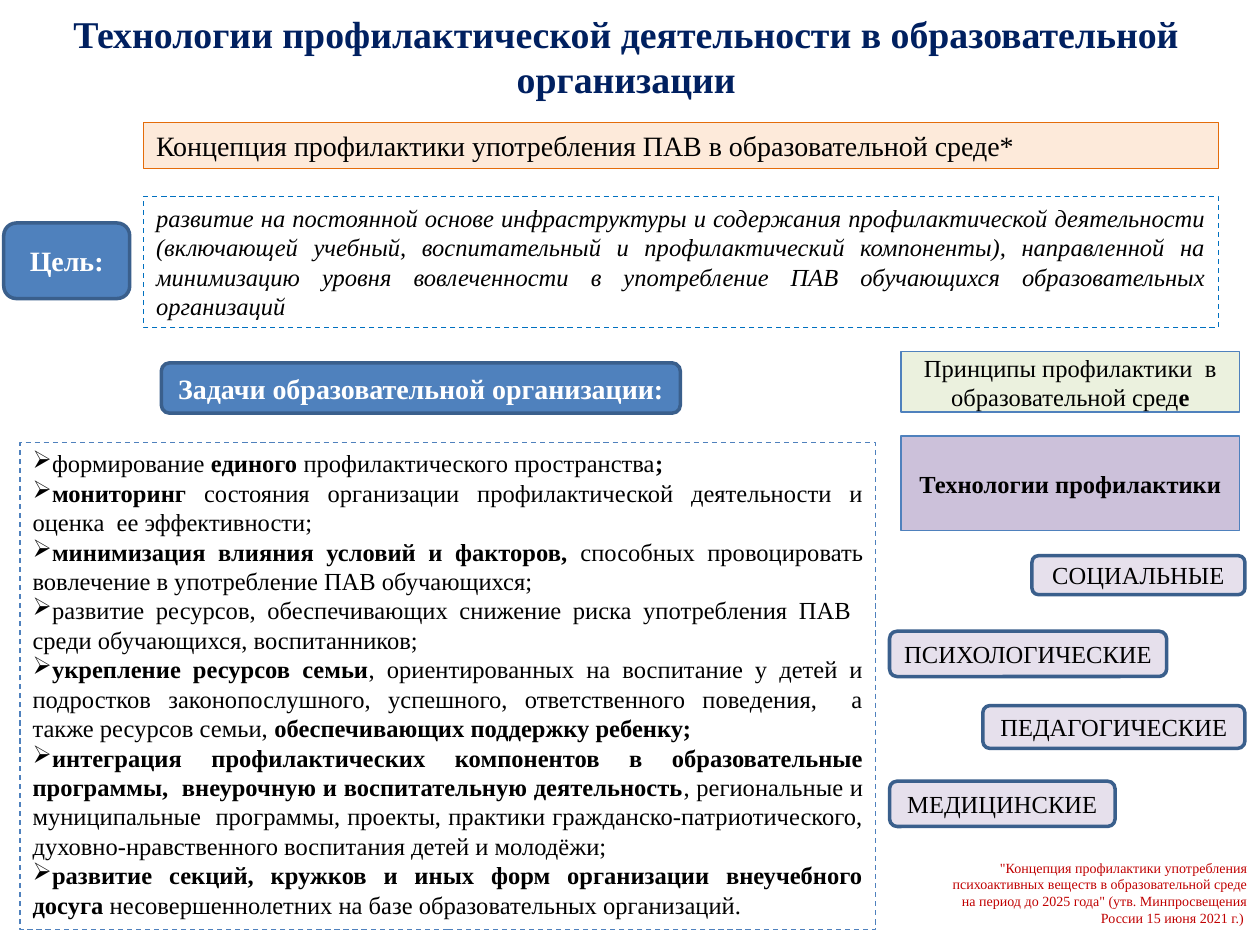
from lxml import etree
from pptx import Presentation
from pptx.dml.color import RGBColor
from pptx.enum import dml, shapes, text
from pptx.oxml import ns
from pptx.util import Inches, Pt

FONT = "Times New Roman"
NAVY = RGBColor(0x00, 0x20, 0x60)
BLACK = RGBColor(0x00, 0x00, 0x00)
WHITE = RGBColor(0xFF, 0xFF, 0xFF)
RED = RGBColor(0xC0, 0x00, 0x00)
ORANGE = RGBColor(0xE4, 0x6C, 0x0A)
PEACH = RGBColor(0xFD, 0xEA, 0xDA)
BRIGHT_BLUE = RGBColor(0x00, 0x70, 0xC0)
BLUE = RGBColor(0x4F, 0x81, 0xBD)
DARK_BLUE = RGBColor(0x3A, 0x5F, 0x8C)
GREEN = RGBColor(0xEB, 0xF1, 0xDE)
PURPLE = RGBColor(0xCC, 0xC1, 0xDA)
LILAC = RGBColor(0xE6, 0xE0, 0xEC)

RECT = shapes.MSO_SHAPE.RECTANGLE
ROUNDED = shapes.MSO_SHAPE.ROUNDED_RECTANGLE
TOP, MIDDLE = text.MSO_ANCHOR.TOP, text.MSO_ANCHOR.MIDDLE
LEFT, CENTER = text.PP_ALIGN.LEFT, text.PP_ALIGN.CENTER
RIGHT, JUSTIFY = text.PP_ALIGN.RIGHT, text.PP_ALIGN.JUSTIFY


def write(box, lines, align, anchor, size, color, bullet=None, **font):
    """Fill a box with paragraphs; ** switches bold on and off."""
    frame = box.text_frame
    frame.word_wrap = True
    frame.vertical_anchor = anchor
    for index, line in enumerate(lines):
        para = frame.add_paragraph() if index else frame.paragraphs[0]
        para.alignment = align
        if bullet:
            etree.SubElement(para._p.get_or_add_pPr(), ns.qn("a:buChar"), char=bullet)
        for number, part in enumerate(line.split("**")):
            if not part:
                continue
            span = para.add_run()
            span.text = part
            look = {"name": FONT, "size": Pt(size), "bold": number % 2 == 1, **font}
            for name, value in look.items():
                setattr(span.font, name, value)
            span.font.color.rgb = color


def add_panel(kind, place, fill, line, width=0.75, dashed=False):
    panel = page.shapes.add_shape(kind, *map(Inches, place))
    panel.shadow.inherit = False
    if fill is None:
        panel.fill.background()
    else:
        panel.fill.solid()
        panel.fill.fore_color.rgb = fill
    panel.line.color.rgb = line
    panel.line.width = Pt(width)
    if dashed:
        panel.line.dash_style = dml.MSO_LINE.DASH
    return panel


deck = Presentation()
deck.slide_width, deck.slide_height = Inches(10), Inches(7.5)
page = deck.slides.add_slide(deck.slide_layouts[5])

title = page.shapes.title
title.left, title.top, title.width, title.height = map(Inches, (0.47, 0.06, 9, 0.77))
write(title, ["**Технологии профилактической деятельности в образовательной организации**"],
      CENTER, MIDDLE, 21.6, NAVY)

concept = add_panel(RECT, (1.14, 0.97, 8.53, 0.37), PEACH, ORANGE)
write(concept, ["Концепция профилактики употребления ПАВ в образовательной среде*"],
      LEFT, TOP, 16, BLACK)

goal = add_panel(RECT, (1.14, 1.56, 8.53, 1.04), None, BRIGHT_BLUE, dashed=True)
write(goal, ["развитие на постоянной основе инфраструктуры и содержания профилактической "
             "деятельности (включающей учебный, воспитательный и профилактический "
             "компоненты), направленной на минимизацию уровня вовлеченности в употребление "
             "ПАВ обучающихся образовательных организаций"],
      JUSTIFY, TOP, 14, BLACK, italic=True)

tasks = add_panel(RECT, (0.16, 3.51, 6.79, 3.87), None, BLUE, dashed=True)
write(tasks, [
    "формирование** единого **профилактического пространства**;**",
    "**мониторинг **состояния организации профилактической деятельности и оценка  ее "
    "эффективности;",
    "**минимизация влияния условий и факторов, **способных провоцировать вовлечение в "
    "употребление ПАВ обучающихся;",
    "развитие ресурсов, обеспечивающих снижение риска употребления ПАВ  среди "
    "обучающихся, воспитанников;",
    "**укрепление ресурсов семьи**, ориентированных на воспитание у детей и подростков "
    "законопослушного, успешного, ответственного поведения,  а также ресурсов семьи, "
    "**обеспечивающих поддержку ребенку;**",
    "**интеграция профилактических компонентов в образовательные программы,  внеурочную "
    "и воспитательную деятельность**, региональные и муниципальные  программы, проекты, "
    "практики гражданско-патриотического, духовно-нравственного воспитания детей и "
    "молодёжи;",
    "**развитие секций, кружков и иных форм организации внеучебного досуга "
    "**несовершеннолетних на базе образовательных организаций.",
], JUSTIFY, TOP, 14, BLACK, bullet="➢")

footnote = page.shapes.add_textbox(*map(Inches, (7.33, 6.77, 2.67, 0.64)))
write(footnote, ['"Концепция профилактики употребления психоактивных веществ в '
                 'образовательной среде на период до 2025 года" (утв. Минпросвещения '
                 'России 15 июня 2021 г.) '], RIGHT, TOP, 8, RED)

for top, height, fill, anchor, wording in [
    (2.79, 0.48, GREEN, TOP, "Принципы профилактики  в образовательной сред**е**"),
    (3.46, 0.75, PURPLE, MIDDLE, "**Технологии профилактики**"),
]:
    heading = add_panel(RECT, (7.15, top, 2.69, height), fill, BLUE)
    frame = heading.text_frame
    frame.margin_left = frame.margin_right = frame.margin_bottom = 0
    frame.margin_top = Inches(0.01)
    write(heading, [wording], CENTER, anchor, 14, BLACK)

for place, fill, size, color, wording in [
    ((0.03, 1.77, 1, 0.6), BLUE, 16, WHITE, "**Цель:**"),
    ((1.28, 2.88, 4.12, 0.4), BLUE, 16, WHITE, "**Задачи образовательной организации:**"),
    ((8.19, 4.41, 1.69, 0.31), LILAC, 14, BLACK, "СОЦИАЛЬНЫЕ"),
    ((7.06, 5.01, 2.2, 0.36), LILAC, 14, BLACK, "ПСИХОЛОГИЧЕСКИЕ"),
    ((7.8, 5.6, 2.08, 0.34), LILAC, 14, BLACK, "ПЕДАГОГИЧЕСКИЕ"),
    ((7.06, 6.2, 1.79, 0.36), LILAC, 14, BLACK, "МЕДИЦИНСКИЕ"),
]:
    label = add_panel(ROUNDED, place, fill, DARK_BLUE, width=2)
    label.text_frame.margin_left = label.text_frame.margin_right = Inches(0.05)
    write(label, [wording], CENTER, MIDDLE, size, color)

deck.save("out.pptx")
